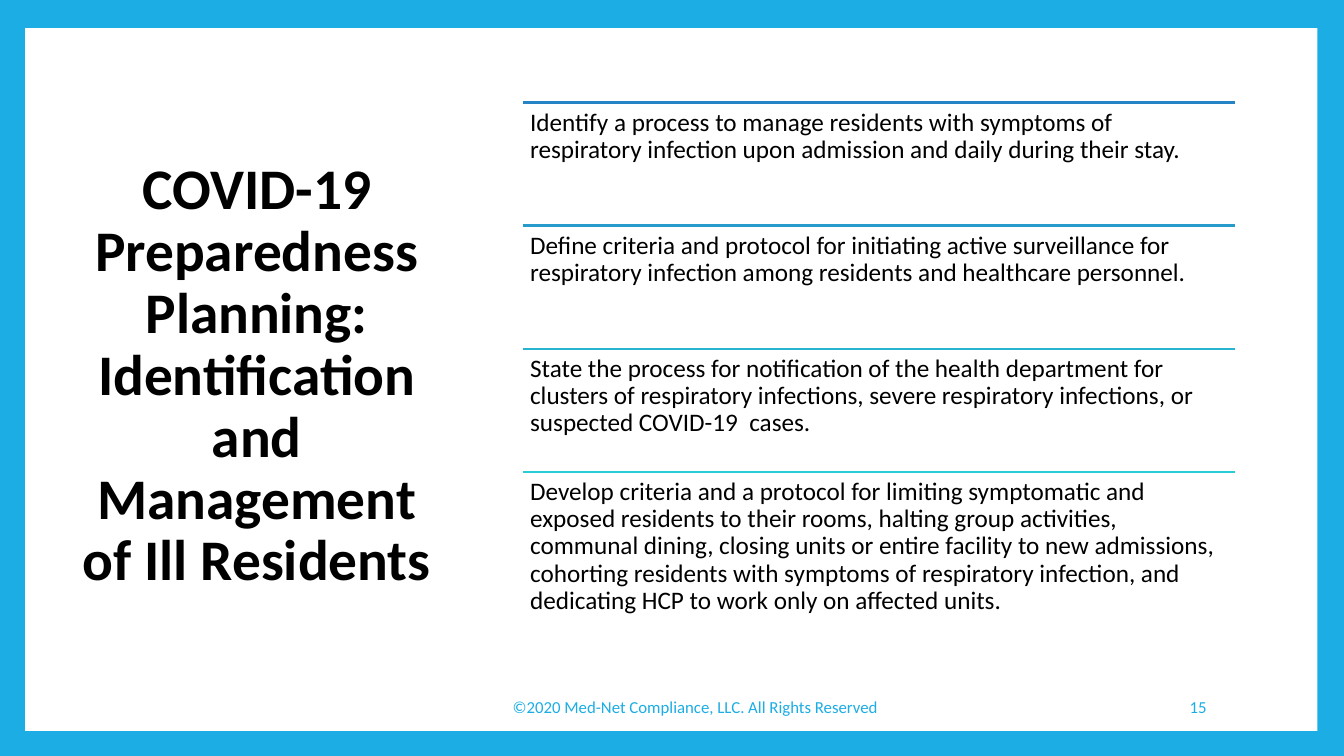
"""Builds the slide on planning for ill residents."""
import dataclasses

import lxml.etree
import pptx
import pptx.dml.color
import pptx.enum.shapes
import pptx.enum.text
import pptx.oxml.ns
import pptx.util

Pt = pptx.util.Pt
Align = pptx.enum.text.PP_ALIGN
Anchor = pptx.enum.text.MSO_ANCHOR


@dataclasses.dataclass(frozen=True)
class Theme:
    """Holds the colours, the font and the type sizes."""
    font: str = "Calibri"
    frame: str = "1CADE4"
    panel: str = "FFFFFF"
    ink: str = "000000"
    rules: tuple = ("2683C6", "269BCC", "27B4D1", "27CED7")
    title: float = 41
    body: float = 18
    foot: float = 12
    rule: float = 1.5


def shade(code):
    """Turns a hex code into a colour."""
    return pptx.dml.color.RGBColor.from_string(code)


class Pen:
    """Draws each kind of element on the current slide."""

    def __init__(self, slide, theme):
        """Keeps the slide and the theme."""
        self.slide = slide
        self.theme = theme

    def ground(self, color):
        """Fills the slide background."""
        fill = self.slide.background.fill
        fill.solid()
        fill.fore_color.rgb = shade(color)

    def panel(self, left, top, width, height, color):
        """Adds a plain panel behind all other shapes."""
        shape = self.slide.shapes.add_shape(
            pptx.enum.shapes.MSO_SHAPE.RECTANGLE,
            Pt(left), Pt(top), Pt(width), Pt(height))
        shape.shadow.inherit = False
        shape.fill.solid()
        shape.fill.fore_color.rgb = shade(color)
        shape.line.fill.background()
        self.slide.shapes._spTree.insert(2, shape._element)

    def label(self, shape, text, size, color, align, anchor, bold=False, space=None):
        """Puts one formatted paragraph in a shape."""
        frame = shape.text_frame
        frame.word_wrap = True
        frame.auto_size = pptx.enum.text.MSO_AUTO_SIZE.NONE
        frame.vertical_anchor = anchor
        para = frame.paragraphs[0]
        para.alignment = align
        para.line_spacing = space
        run = para.add_run()
        run.text = text
        run.font.name = self.theme.font
        run.font.size = Pt(size)
        run.font.bold = bold
        run.font.color.rgb = shade(color)

    def title(self, left, top, width, height, text):
        """Moves and fills the title placeholder."""
        shape = self.slide.shapes.title
        shape.left, shape.top = Pt(left), Pt(top)
        shape.width, shape.height = Pt(width), Pt(height)
        self.label(shape, text, self.theme.title, self.theme.ink,
                   Align.CENTER, Anchor.MIDDLE, bold=True, space=0.9)

    def box(self, left, top, width, height):
        """Adds an empty text box."""
        return self.slide.shapes.add_textbox(
            Pt(left), Pt(top), Pt(width), Pt(height))

    def foot(self, left, width, text, align):
        """Adds one part of the footer."""
        self.label(self.box(left, 490.3, width, 28.8), text, self.theme.foot,
                   self.theme.frame, align, Anchor.MIDDLE)

    def item(self, left, top, width, height, text):
        """Adds the text of one planning step."""
        shape = self.box(left, top, width, height)
        frame = shape.text_frame
        frame.margin_left = frame.margin_right = Pt(5)
        frame.margin_top = frame.margin_bottom = Pt(5)
        self.label(shape, text, self.theme.body, self.theme.ink,
                   Align.LEFT, Anchor.TOP, space=0.9)

    def rule(self, left, top, width, color):
        """Adds a level line."""
        line = self.slide.shapes.add_connector(
            pptx.enum.shapes.MSO_CONNECTOR.STRAIGHT,
            Pt(left), Pt(top), Pt(left + width), Pt(top))
        line.line.color.rgb = shade(color)
        line.line.width = Pt(self.theme.rule)
        lxml.etree.SubElement(line._element.spPr, pptx.oxml.ns.qn("a:effectLst"))


STEPS = (
    "Identify a process to manage residents with symptoms of respiratory "
    "infection upon admission and daily during their stay.",
    "Define criteria and protocol for initiating active surveillance for "
    "respiratory infection among residents and healthcare personnel.",
    "State the process for notification of the health department for clusters "
    "of respiratory infections, severe respiratory infections, or suspected "
    "COVID-19  cases.",
    "Develop criteria and a protocol for limiting symptomatic and exposed "
    "residents to their rooms, halting group activities, communal dining, "
    "closing units or entire facility to new admissions, cohorting residents "
    "with symptoms of respiratory infection, and dedicating HCP to work only "
    "on affected units.",
)


def main():
    """Builds and saves the deck."""
    deck = pptx.Presentation()
    deck.slide_width, deck.slide_height = Pt(960), Pt(540)
    theme = Theme()
    pen = Pen(deck.slides.add_slide(deck.slide_layouts[5]), theme)
    pen.ground(theme.frame)
    pen.panel(18, 20, 923, 502, theme.panel)
    pen.title(51, 48.2, 265, 441.4,
              "COVID-19 Preparedness Planning: Identification and "
              "Management of Ill Residents")
    pen.foot(311, 371.5, "©2020 Med-Net Compliance, LLC. All Rights Reserved",
             Align.CENTER)
    pen.foot(734.4, 134.6, "15", Align.RIGHT)

    left, top, width, pitch = 373.7, 73.2, 508.3, 87.9
    for row, (text, color) in enumerate(zip(STEPS, theme.rules)):
        edge = top + row * pitch
        pen.rule(left, edge, width, color)
        pen.item(left, edge, width, pitch, text)

    deck.save("out.pptx")


if __name__ == "__main__":
    main()
